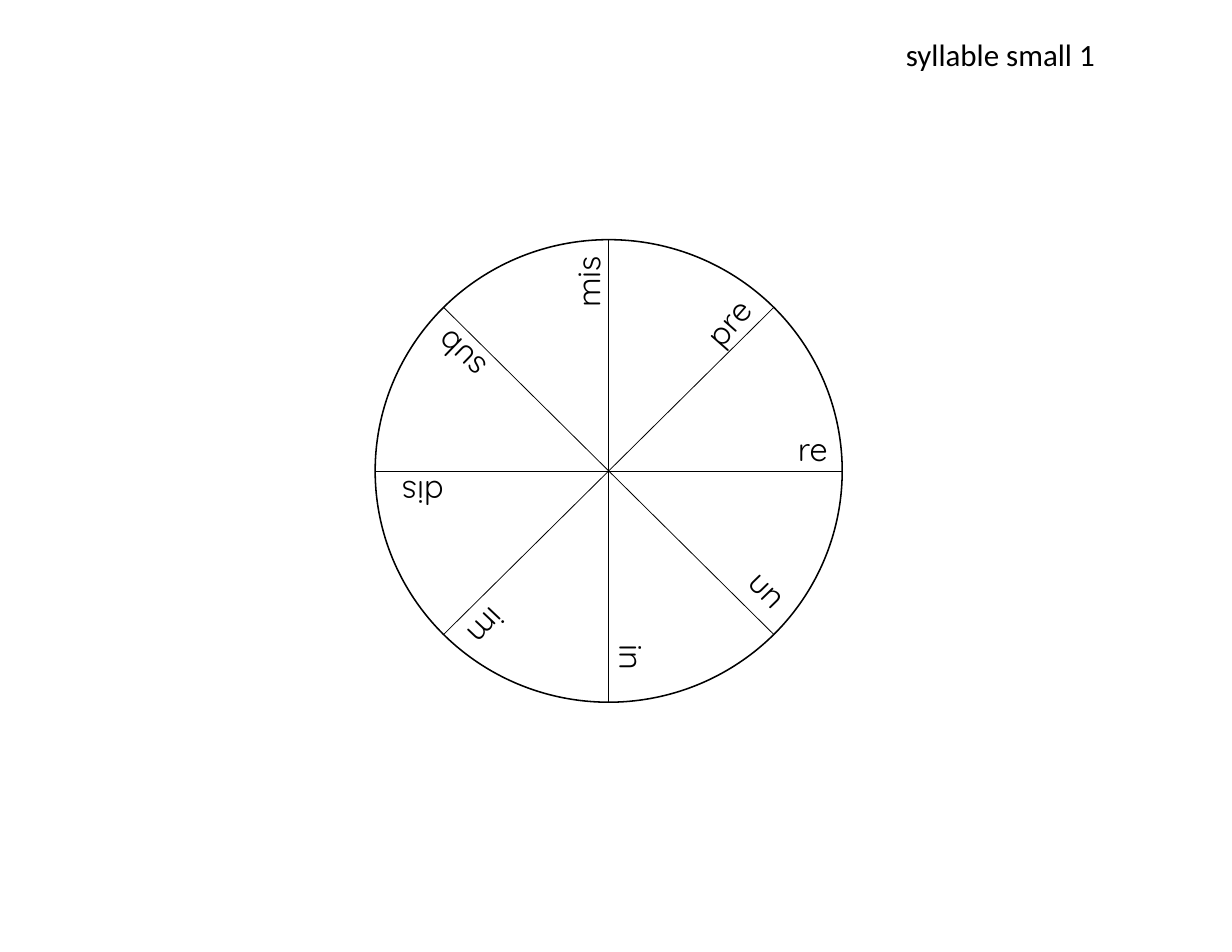
from dataclasses import dataclass
from math import cos, radians, sin

from lxml.etree import SubElement
from pptx import Presentation
from pptx.dml.color import RGBColor
from pptx.enum.shapes import MSO_CONNECTOR, MSO_SHAPE
from pptx.enum.text import MSO_AUTO_SIZE
from pptx.oxml.ns import qn
from pptx.util import Inches, Pt


@dataclass(frozen=True)
class Theme:
    ink: RGBColor = RGBColor(0, 0, 0)
    label_font: str = "Quicksand"
    label_size: float = 20.9
    title_font: str = "Calibri"
    title_size: float = 19.9
    rim_width: float = 1
    spoke_width: float = 0.5


THEME = Theme()
LABEL_HEIGHT = 0.45
SPOKE_ANGLES = (90, 0, 45, 135)

# syllable, centre offset from the hub (x, y), box width, rotation
SYLLABLES = [
    ("re", 2.0, -0.2, 0.82, 0),
    ("un", 1.62, 1.25, 1.09, 45.7),
    ("in", 0.21, 1.93, 0.95, 90),
    ("im", -1.23, 1.55, 0.94, 133.5),
    ("dis", -1.89, 0.21, 1.03, 180),
    ("sub", -1.54, -1.24, 1.27, 224),
    ("mis", -0.19, -1.98, 1.24, 270),
    ("pre", 1.25, -1.54, 1.2, 311.3),
]


def add_text(page, box, text, font, size, rotation=0):
    label = page.shapes.add_textbox(*map(Inches, box))
    label.rotation = rotation
    frame = label.text_frame
    frame.word_wrap = True
    frame.auto_size = MSO_AUTO_SIZE.SHAPE_TO_FIT_TEXT
    para = frame.paragraphs[0]
    para.text = text
    para.font.name = font
    para.font.size = Pt(size)
    para.font.color.rgb = THEME.ink


def add_wheel(page, box):
    """Draw the rim and its diameters as one group, then the syllables."""
    left, top, width, height = box
    hub_x, hub_y = left + width / 2, top + height / 2
    wheel = page.shapes.add_group_shape()

    rim = wheel.shapes.add_shape(MSO_SHAPE.OVAL, *map(Inches, box))
    rim.shadow.inherit = False
    rim.fill.background()
    rim.line.color.rgb = THEME.ink
    rim.line.width = Pt(THEME.rim_width)

    for angle in SPOKE_ANGLES:
        reach_x = width / 2 * cos(radians(angle))
        reach_y = height / 2 * sin(radians(angle))
        ends = (hub_x - reach_x, hub_y - reach_y, hub_x + reach_x, hub_y + reach_y)
        spoke = wheel.shapes.add_connector(MSO_CONNECTOR.STRAIGHT, *map(Inches, ends))
        spoke.line.color.rgb = THEME.ink
        spoke.line.width = Pt(THEME.spoke_width)
        SubElement(spoke._element.spPr, qn("a:effectLst"))

    for text, dx, dy, label_width, rotation in SYLLABLES:
        label_box = (hub_x + dx - label_width / 2, hub_y + dy - LABEL_HEIGHT / 2,
                     label_width, LABEL_HEIGHT)
        add_text(page, label_box, text, THEME.label_font, THEME.label_size, rotation)


def main():
    deck = Presentation()
    deck.slide_width, deck.slide_height = Inches(11), Inches(8.5)
    page = deck.slides.add_slide(deck.slide_layouts[6])
    add_wheel(page, (3.35, 2.14, 4.17, 4.13))
    add_text(page, (7.99, 0.27, 2.52, 0.44), "syllable small 1",
             THEME.title_font, THEME.title_size)
    deck.save("out.pptx")


if __name__ == "__main__":
    main()
